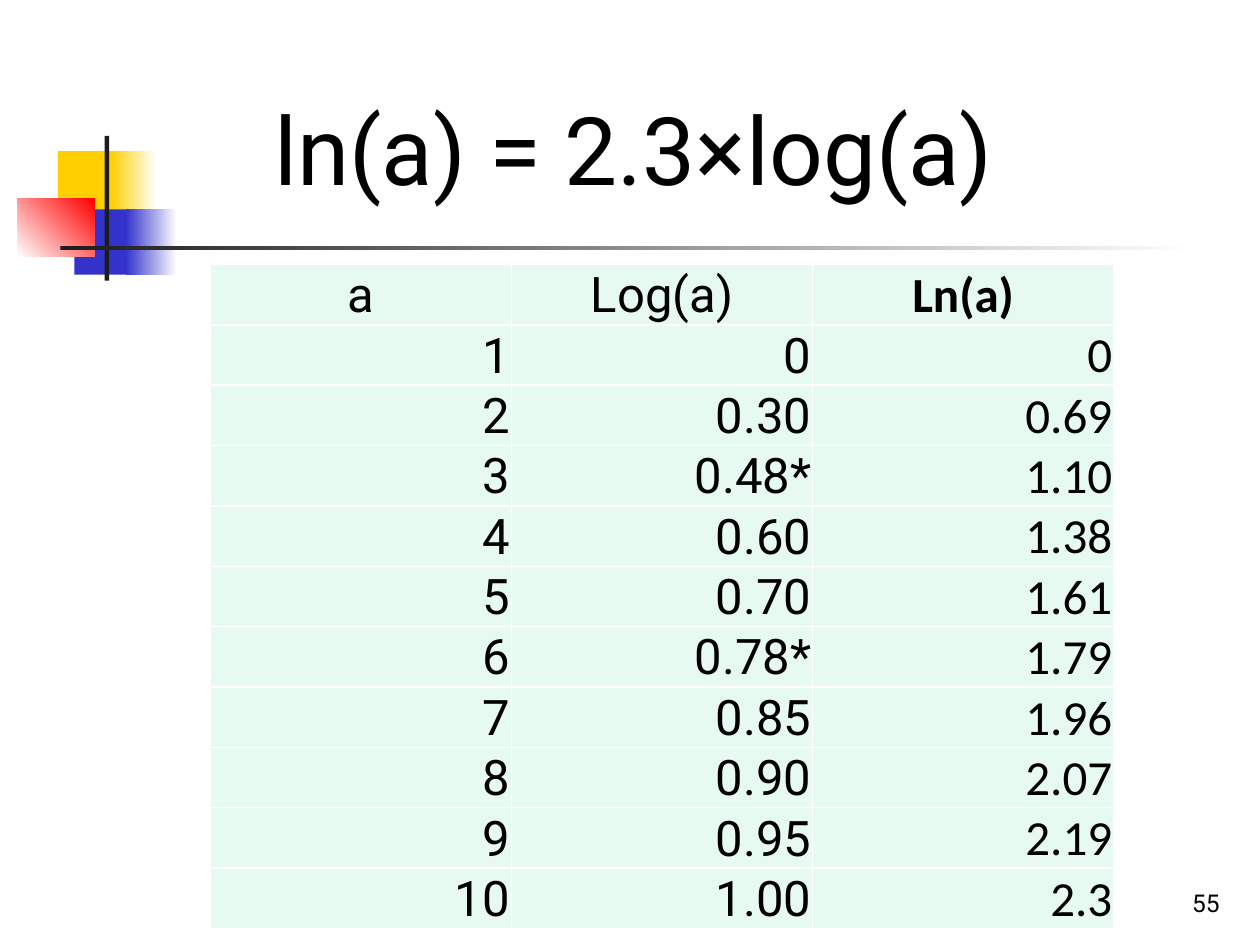
from pptx import Presentation
from pptx.dml.color import RGBColor as Rgb
from pptx.enum.shapes import MSO_SHAPE as Shape
from pptx.enum.text import MSO_ANCHOR as Anchor, MSO_AUTO_SIZE as AutoSize, PP_ALIGN as Align
from pptx.oxml import parse_xml
from pptx.oxml.ns import nsdecls
from pptx.util import Cm, Pt

COLORS = {
    "text": "000000", "white": "FFFFFF", "yellow": "FFCF01", "blue": "3333CC",
    "red": "FF0000", "dark": "1C1C1C", "mint": "E7FAF1",
}
HEADER = ("a", "Log(a)", "Ln(a)")
VALUES = [
    ("1", "0", "0"),
    ("2", "0.30", "0.69"),
    ("3", "0.48*", "1.10"),
    ("4", "0.60", "1.38"),
    ("5", "0.70", "1.61"),
    ("6", "0.78*", "1.79"),
    ("7", "0.85", "1.96"),
    ("8", "0.90", "2.07"),
    ("9", "0.95", "2.19"),
    ("10", "1.00", "2.3"),
]
COLUMN_FONTS = ("Roboto", "Roboto", "Calibri")


def color(name):
    return Rgb.from_string(COLORS[name])


def write(frame, text, size=28, font="Roboto", bold=False, align=Align.LEFT):
    para = frame.paragraphs[0]
    para.alignment = align
    span = para.add_run()
    span.text = text
    span.font.size = Pt(size)
    span.font.name = font
    span.font.bold = bold
    span.font.color.rgb = color("text")


class SlideBuilder:
    """Holds the current slide and draws its elements in one style."""

    def __init__(self, deck):
        self.page = deck.slides.add_slide(deck.slide_layouts[5])

    def title(self, text, left, top, width, height):
        box = self.page.shapes.title
        box.left, box.top, box.width, box.height = map(Cm, (left, top, width, height))
        frame = box.text_frame
        frame.word_wrap = False
        frame.auto_size = AutoSize.SHAPE_TO_FIT_TEXT
        frame.vertical_anchor = Anchor.TOP
        write(frame, text, size=54)

    def block(self, left, top, width, height, start, end=None, angle=0):
        box = self.page.shapes.add_shape(Shape.RECTANGLE, *map(Cm, (left, top, width, height)))
        box.shadow.inherit = False
        box.line.fill.background()
        if end is None:
            box.fill.solid()
            box.fill.fore_color.rgb = color(start)
            return
        box.fill.gradient()
        box.fill.gradient_angle = angle
        for stop, name in zip(box.fill.gradient_stops, (start, end)):
            stop.color.rgb = color(name)

    def number(self, text, left, top, width, height):
        box = self.page.shapes.add_textbox(*map(Cm, (left, top, width, height)))
        frame = box.text_frame
        frame.word_wrap = True
        frame.vertical_anchor = Anchor.BOTTOM
        write(frame, text, size=14, align=Align.RIGHT)

    def table(self, rows, left, top, width, height):
        holder = self.page.shapes.add_table(
            len(rows), len(rows[0]), *map(Cm, (left, top, width, height)))
        grid = holder.table
        grid.first_row = grid.horz_banding = False
        for row_index, row in enumerate(rows):
            is_header = row_index == 0
            for column, (text, font) in enumerate(zip(row, COLUMN_FONTS)):
                cell = grid.cell(row_index, column)
                self.style_cell(cell)
                write(cell.text_frame, text, font=font,
                      bold=is_header and font == "Calibri",
                      align=Align.CENTER if is_header else Align.RIGHT)

    def style_cell(self, cell):
        cell.margin_left = cell.margin_right = cell.margin_top = Cm(0.03)
        cell.margin_bottom = 0
        cell.vertical_anchor = Anchor.BOTTOM
        properties = cell._tc.get_or_add_tcPr()
        for side in ("lnL", "lnR", "lnT", "lnB"):
            properties.append(parse_xml(
                f'<a:{side} {nsdecls("a")} w="{Pt(1)}"><a:solidFill>'
                f'<a:srgbClr val="{COLORS["white"]}"/></a:solidFill></a:{side}>'))
        cell.fill.solid()
        cell.fill.fore_color.rgb = color("mint")


def main():
    deck = Presentation()
    deck.slide_width, deck.slide_height = Cm(25.4), Cm(19.05)
    slide = SlideBuilder(deck)
    slide.block(1.17, 3.05, 1.22, 1.32, "yellow")
    slide.block(2.24, 3.05, 0.91, 1.32, "yellow", "white")
    slide.block(1.5, 4.22, 1.17, 1.32, "blue")
    slide.block(2.54, 4.22, 1.02, 1.32, "blue", "white")
    slide.block(0.36, 4.01, 1.55, 1.17, "white", "red", angle=45)
    slide.block(2.11, 2.74, 0.09, 2.92, "dark")
    slide.block(1.22, 4.95, 22.86, 0.09, "dark", "white")
    slide.table([HEADER] + VALUES, 4.24, 5.33, 18.21, 13.26)
    slide.number("55", 19.56, 17.35, 5.28, 1.27)
    slide.title("ln(a) = 2.3×log(a)", 5.28, 1.7, 16.23, 2.57)
    deck.save("out.pptx")


if __name__ == "__main__":
    main()
